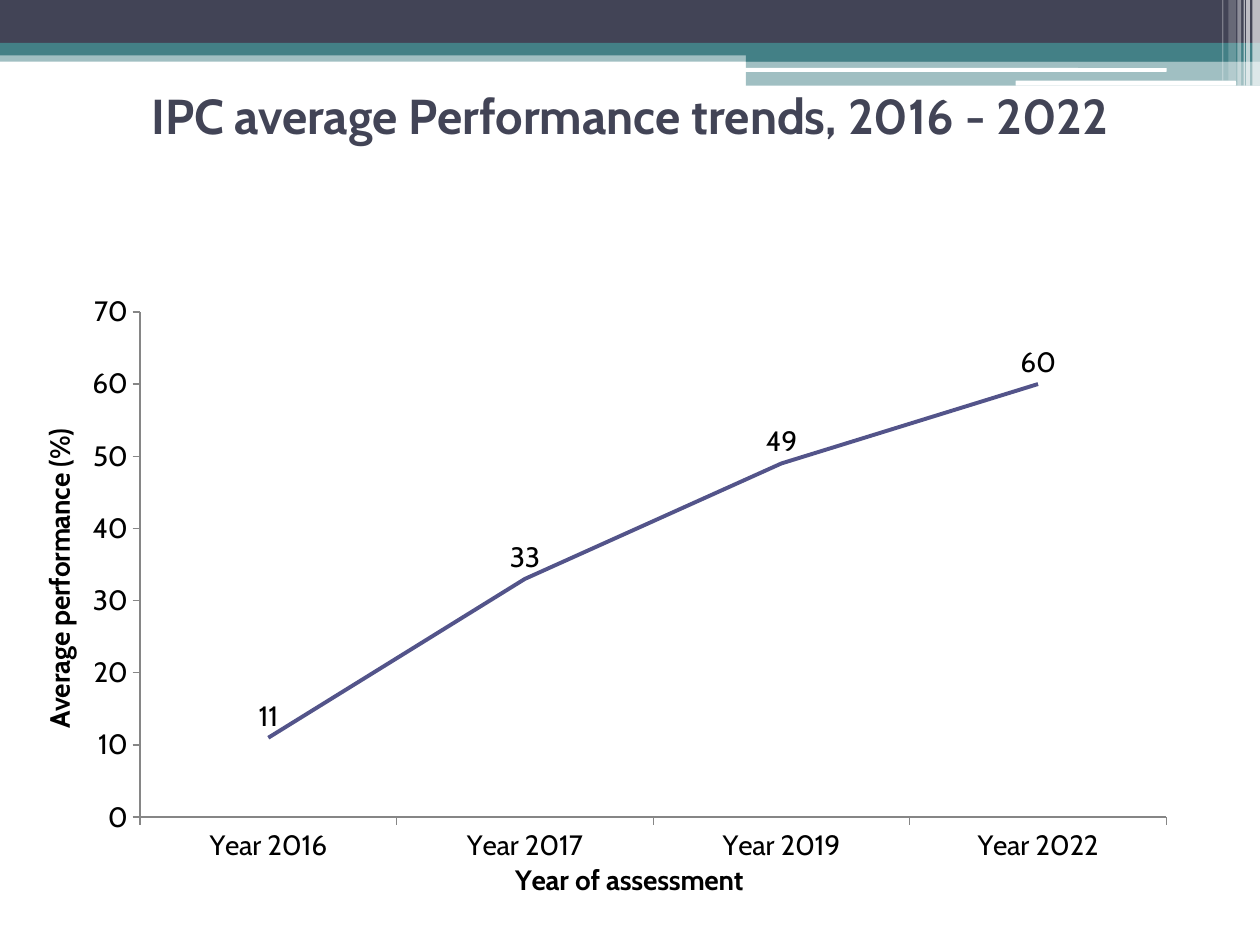
from dataclasses import dataclass

from lxml.etree import SubElement
from pptx import Presentation
from pptx.chart.data import CategoryChartData
from pptx.dml.color import RGBColor
from pptx.enum.chart import XL_CHART_TYPE, XL_LABEL_POSITION, XL_MARKER_STYLE, XL_TICK_MARK
from pptx.enum.shapes import MSO_SHAPE
from pptx.enum.text import MSO_ANCHOR, PP_ALIGN
from pptx.oxml.ns import qn
from pptx.util import Inches, Pt


@dataclass(frozen=True)
class Theme:
    font: str = "Cabin"
    navy: str = "424456"
    teal: str = "438086"
    white: str = "FFFFFF"
    black: str = "000000"
    trend: str = "53548A"
    axis: str = "868686"
    title_size: int = 28
    chart_size: int = 16


THEME = Theme()


def style_font(font, size, color, bold=False):
    font.name = THEME.font
    font.size = Pt(size)
    font.bold = bold
    font.color.rgb = RGBColor.from_string(color)


def add_bar(slide, box, color, opacity=100, preset=MSO_SHAPE.RECTANGLE):
    bar = slide.shapes.add_shape(preset, *map(Inches, box))
    bar.shadow.inherit = False
    bar.line.fill.background()
    bar.fill.solid()
    bar.fill.fore_color.rgb = RGBColor.from_string(color)
    if opacity < 100:
        color_node = bar.fill._xPr.find(qn("a:solidFill"))[0]
        SubElement(color_node, qn("a:alpha")).set("val", str(opacity * 1000))


def add_header_band(slide, left, top, width):
    right = left + width
    tab = 4.08  # width of the deeper block at the right

    # Full-width stripes, then the deeper block
    for offset, height, stripe_width, color, opacity in (
        (0.4, 0.09, width, THEME.teal, 50),
        (0, 0.34, width, THEME.navy, 100),
        (0.34, 0.1, width, THEME.teal, 100),
        (0.39, 0.1, tab, THEME.teal, 100),
        (0.48, 0.2, tab, THEME.teal, 50),
    ):
        add_bar(slide, (right - stripe_width, top + offset, stripe_width, height), color, opacity)

    # White rules cut into the block
    for inset, offset, rule_width, height in ((4.09, 0.54, 3.35, 0.03), (1.94, 0.64, 1.75, 0.04)):
        add_bar(slide, (right - inset, top + offset, rule_width, height),
                THEME.white, preset=MSO_SHAPE.ROUNDED_RECTANGLE)

    # Translucent vertical slivers at the right edge
    for inset, sliver_width, height, opacity in (
        (0.06, 0.06, 0.68, 65),
        (0.11, 0.03, 0.68, 65),
        (0.13, 0.01, 0.68, 60),
        (0.18, 0.03, 0.68, 40),
        (0.25, 0.06, 0.64, 20),
        (0.3, 0.01, 0.64, 30),
    ):
        add_bar(slide, (right - inset, top, sliver_width, height), THEME.white, opacity)


def add_title(slide, left, top, width, height):
    frame = slide.shapes.add_textbox(*map(Inches, (left, top, width, height))).text_frame
    frame.word_wrap = True
    frame.vertical_anchor = MSO_ANCHOR.MIDDLE
    frame.text = "IPC average Performance trends, 2016 - 2022"
    heading = frame.paragraphs[0]
    heading.alignment = PP_ALIGN.CENTER
    style_font(heading.runs[0].font, THEME.title_size, THEME.navy, bold=True)


def style_axis(axis, title):
    axis.has_major_gridlines = False
    axis.major_tick_mark = XL_TICK_MARK.OUTSIDE
    axis.minor_tick_mark = XL_TICK_MARK.NONE
    axis.format.line.color.rgb = RGBColor.from_string(THEME.axis)
    axis.format.line.width = Pt(0.75)
    frame = axis.axis_title.text_frame
    frame.text = title
    style_font(frame.paragraphs[0].runs[0].font, THEME.chart_size, THEME.black, bold=True)


def set_plot_area(chart, x, y, w, h):
    plot_area = chart._chartSpace.chart.plotArea
    layout = plot_area.find(qn("c:layout"))
    if layout is None:
        layout = plot_area.makeelement(qn("c:layout"))
        plot_area.insert(0, layout)
    manual = SubElement(layout, qn("c:manualLayout"))
    for tag, value in (("layoutTarget", "inner"), ("xMode", "edge"), ("yMode", "edge"),
                       ("x", x), ("y", y), ("w", w), ("h", h)):
        SubElement(manual, qn(f"c:{tag}")).set("val", str(value))


def add_trend_chart(slide, left, top, width, height):
    performance = CategoryChartData()
    performance.categories = ["Year 2016", "Year 2017", "Year 2019", "Year 2022"]
    performance.add_series("Series 1", (11, 33, 49, 60))
    chart = slide.shapes.add_chart(
        XL_CHART_TYPE.LINE, *map(Inches, (left, top, width, height)), performance).chart
    chart.has_legend = False
    chart.has_title = False
    style_font(chart.font, THEME.chart_size, THEME.black)
    set_plot_area(chart, 0.088, 0.102, 0.862, 0.764)

    # Axes
    style_axis(chart.category_axis, "Year of assessment")
    style_axis(chart.value_axis, "Average performance (%)")
    chart.value_axis.minimum_scale = 0
    chart.value_axis.maximum_scale = 70
    chart.value_axis.major_unit = 10

    # Trend line and its values
    plot = chart.plots[0]
    plot.vary_by_categories = False
    trend = plot.series[0]
    trend.smooth = False
    trend.marker.style = XL_MARKER_STYLE.NONE
    trend.format.line.color.rgb = RGBColor.from_string(THEME.trend)
    trend.format.line.width = Pt(2.25)
    labels = trend.data_labels
    labels.show_value = True
    labels.position = XL_LABEL_POSITION.ABOVE
    style_font(labels.font, THEME.chart_size, THEME.black)


def main():
    deck = Presentation()
    deck.slide_width, deck.slide_height = Inches(10), Inches(7.5)
    slide = deck.slides.add_slide(deck.slide_layouts[6])
    add_header_band(slide, 0, 0, 10)
    add_title(slide, 0, 0.6, 10, 0.63)
    add_trend_chart(slide, 0.28, 1.94, 9.45, 5.25)
    deck.save("out.pptx")


if __name__ == "__main__":
    main()
